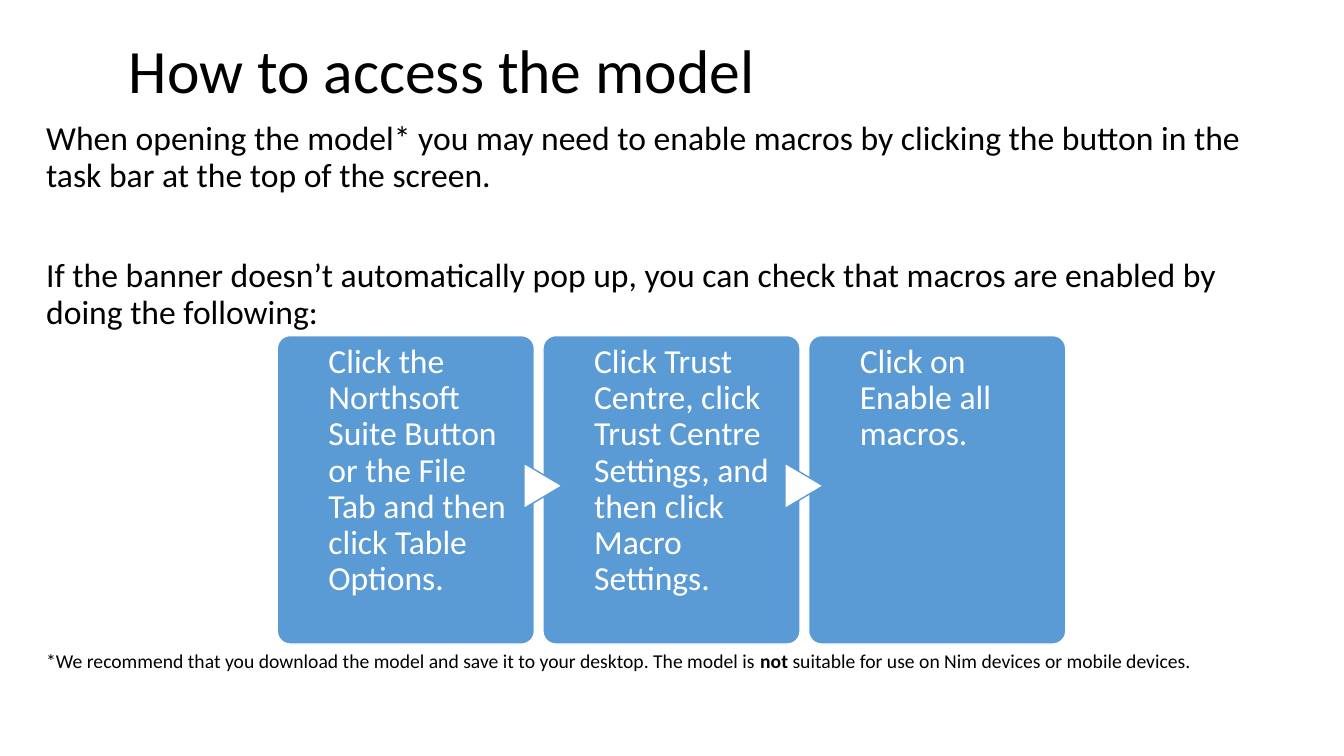
from pptx import Presentation
from pptx.dml.color import RGBColor
from pptx.enum.shapes import MSO_SHAPE as Shape
from pptx.enum.text import MSO_ANCHOR as Anchor, PP_ALIGN as Align
from pptx.util import Inches, Pt

BLACK = RGBColor(0x00, 0x00, 0x00)
WHITE = RGBColor(0xFF, 0xFF, 0xFF)
BLUE = RGBColor(0x5B, 0x9B, 0xD5)

INTRO = [
    "When opening the model* you may need to enable macros by clicking the button "
    "in the task bar at the top of the screen.",
    "If the banner doesn’t automatically pop up, you can check that macros are "
    "enabled by doing the following:",
]
STEPS = [
    "Click the Northsoft Suite Button or the File Tab and then click Table Options.",
    "Click Trust Centre, click Trust Centre Settings, and then click Macro Settings.",
    "Click on Enable all macros.",
]
FOOTNOTE = [
    ("*We recommend that you download the model and save it to your desktop. "
     "The model is ", False),
    ("not", True),
    (" suitable for use on Nim devices or mobile devices.", False),
]


def add_run(paragraph, text, size, color=BLACK, bold=False):
    paragraph.alignment = Align.LEFT
    paragraph.line_spacing = 0.9
    run = paragraph.add_run()
    run.text = text
    run.font.color.rgb = color
    font_format = {"name": "Calibri", "size": Pt(size), "bold": bold}
    for attribute, value in font_format.items():
        setattr(run.font, attribute, value)


def add_text_frame(slide, left, top, width, height, anchor=Anchor.TOP):
    frame = slide.shapes.add_textbox(
        Inches(left), Inches(top), Inches(width), Inches(height)).text_frame
    frame.word_wrap = True
    frame.vertical_anchor = anchor
    return frame


def add_outlined(slide, preset, box, fill, line):
    shape = slide.shapes.add_shape(preset, *map(Inches, box))
    shape.shadow.inherit = False
    shape.fill.solid()
    shape.fill.fore_color.rgb = fill
    shape.line.color.rgb = line
    shape.line.width = Pt(1)
    return shape


def add_title(slide, left, top, width, height):
    frame = add_text_frame(slide, left, top, width, height, Anchor.MIDDLE)
    add_run(frame.paragraphs[0], "How to access the model", 44)


def add_intro(slide, left, top, width, height):
    frame = add_text_frame(slide, left, top, width, height)
    enable, check = frame.paragraphs[0], frame.add_paragraph()
    check.space_before = Pt(46)
    for paragraph, text in zip((enable, check), INTRO):
        add_run(paragraph, text, 24)


def add_step_card(slide, left, top, width, height, text):
    card = add_outlined(slide, Shape.ROUNDED_RECTANGLE,
                        (left, top, width, height), BLUE, WHITE)
    card.adjustments[0] = 0.05
    frame = card.text_frame
    frame_format = {
        "word_wrap": True,
        "vertical_anchor": Anchor.TOP,
        "margin_left": Inches(0.47),
        "margin_top": Inches(0.05),
        "margin_right": Inches(0.1),
        "margin_bottom": 0,
    }
    for attribute, value in frame_format.items():
        setattr(frame, attribute, value)
    add_run(frame.paragraphs[0], text, 24, WHITE)


def add_steps(slide, left, top, width, height):
    """Place equal cards across the box, with a pointer between neighbours."""
    card_width = 2.55
    pitch = (width - card_width) / (len(STEPS) - 1)
    for index, text in enumerate(STEPS):
        add_step_card(slide, left + index * pitch, top, card_width, height, text)
    for index in range(len(STEPS) - 1):
        pointer_box = (left + 2.41 + index * 2.59, top + 1.3, 0.45, 0.38)
        pointer = add_outlined(slide, Shape.FLOWCHART_EXTRACT, pointer_box, WHITE, BLUE)
        pointer.rotation = 90


def add_footnote(slide, left, top, width, height):
    frame = add_text_frame(slide, left, top, width, height)
    for text, bold in FOOTNOTE:
        add_run(frame.paragraphs[0], text, 14, bold=bold)


def main():
    deck = Presentation()
    deck.slide_width, deck.slide_height = Inches(13.33), Inches(7.5)
    slide = deck.slides.add_slide(deck.slide_layouts[6])
    add_title(slide, 1.18, 0, 11.5, 1.45)
    add_intro(slide, 0.36, 1.16, 12.6, 2.15)
    add_steps(slide, 2.75, 3.33, 7.82, 3.06)
    add_footnote(slide, 0.36, 6.41, 12.6, 0.35)
    deck.save("out.pptx")


if __name__ == "__main__":
    main()
